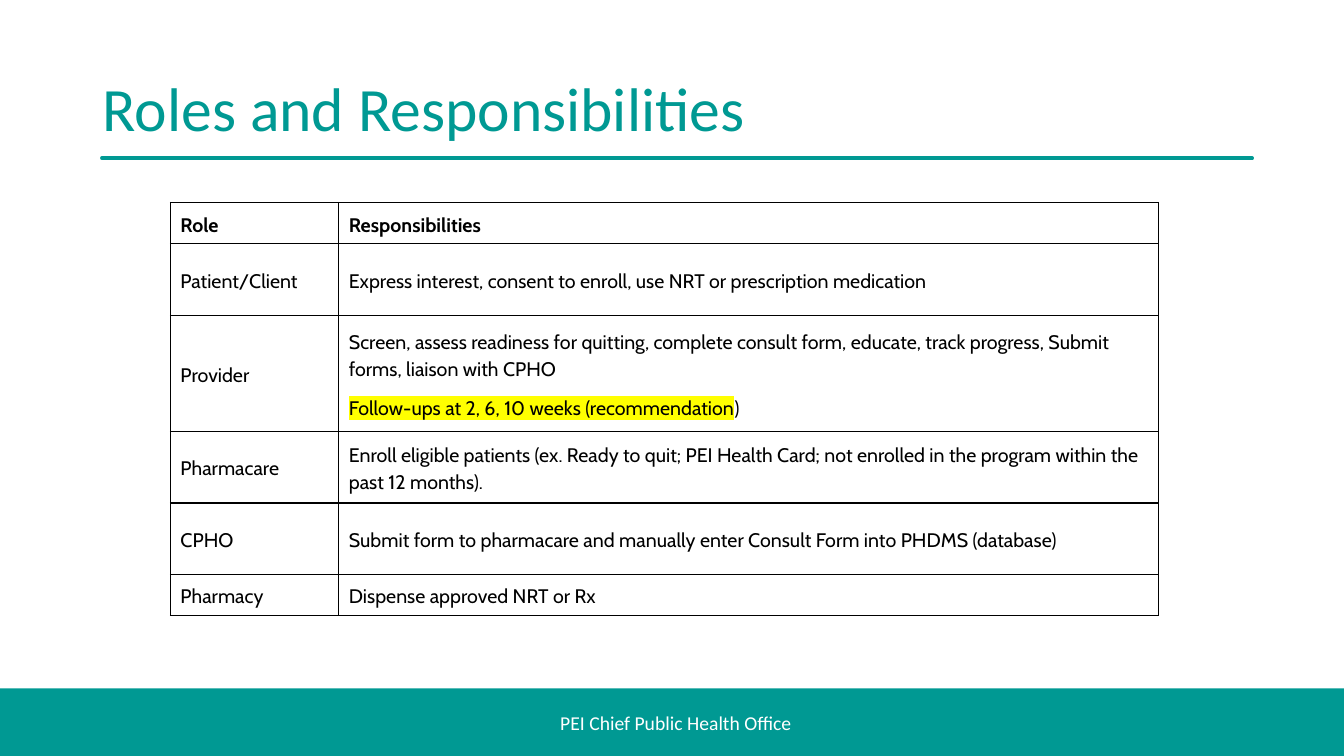
from dataclasses import dataclass

from lxml.etree import SubElement
from pptx import Presentation
from pptx.dml.color import RGBColor
from pptx.enum.shapes import MSO_CONNECTOR as CONN, MSO_SHAPE as SHAPE
from pptx.enum.text import MSO_ANCHOR as ANCHOR, PP_ALIGN as ALIGN
from pptx.oxml import parse_xml
from pptx.oxml.ns import nsdecls, qn
from pptx.util import Pt

PX = 9144  # EMU per px, 100 px to the inch
COLORS = {"teal": "009993", "white": "FFFFFF", "black": "000000", "yellow": "FFFF00"}
HEADING_FONT, TABLE_FONT = "Calibri", "Cabin"
COL_WIDTHS = (167, 813)


@dataclass
class Run:
    text: str
    size: int = 14
    font: str = TABLE_FONT
    color: str = "black"
    bold: bool = False
    highlight: str = ""


@dataclass
class Role:
    height: int
    name: str
    duties: list[list[Run]]
    header: bool = False


ROLES = [
    Role(41, "Role", [[Run("Responsibilities", bold=True)]], header=True),
    Role(71, "Patient/Client", [[Run(
        "Express interest, consent to enroll, use NRT or prescription medication")]]),
    Role(115, "Provider", [
        [Run("Screen, assess readiness for quitting, complete consult form, educate, "
             "track progress, Submit forms, liaison with CPHO")],
        [Run("Follow-ups at 2, 6, 10 weeks (recommendation", highlight="yellow"), Run(")")],
    ]),
    Role(71, "Pharmacare", [[Run(
        "Enroll eligible patients (ex. Ready to quit; PEI Health Card; "
        "not enrolled in the program within the past 12 months).")]]),
    Role(71, "CPHO", [[Run(
        "Submit form to pharmacare and manually enter Consult Form into PHDMS (database)")]]),
    Role(41, "Pharmacy", [[Run("Dispense approved NRT or Rx")]]),
]


def px(*lengths: int) -> list[int]:
    return [n * PX for n in lengths]


def rgb(name: str) -> RGBColor:
    return RGBColor.from_string(COLORS[name])


def add_run(p, run: Run) -> None:
    r = p.add_run()
    r.text = run.text
    r.font.size = Pt(run.size)
    r.font.bold = run.bold
    r.font.color.rgb = rgb(run.color)
    r.font.name = run.font
    if run.highlight:
        mark = parse_xml(f'<a:highlight {nsdecls("a")}>'
                         f'<a:srgbClr val="{COLORS[run.highlight]}"/></a:highlight>')
        r.font._element.find(qn("a:solidFill")).addnext(mark)


def add_text(slide, box: tuple[int, int, int, int], run: Run,
             align: ALIGN, spacing: float = 1.0) -> None:
    tf = slide.shapes.add_textbox(*px(*box)).text_frame
    tf.word_wrap = True
    tf.vertical_anchor = ANCHOR.MIDDLE
    p = tf.paragraphs[0]
    p.alignment = align
    p.line_spacing = spacing
    add_run(p, run)


def add_borders(cell) -> None:
    tc_pr = cell._tc.get_or_add_tcPr()
    for i, side in enumerate("LRTB"):
        tc_pr.insert(i, parse_xml(
            f'<a:ln{side} {nsdecls("a")} w="{Pt(1)}"><a:solidFill>'
            f'<a:srgbClr val="{COLORS["black"]}"/></a:solidFill></a:ln{side}>'))


def fill_cell(cell, paragraphs: list[list[Run]]) -> None:
    cell.fill.background()
    add_borders(cell)
    cell.vertical_anchor = ANCHOR.MIDDLE
    tf = cell.text_frame
    for i, runs in enumerate(paragraphs):
        p = tf.add_paragraph() if i else tf.paragraphs[0]
        p.line_spacing = 1.15
        p.space_after = Pt(8)
        for run in runs:
            add_run(p, run)


def add_roles_table(slide, left: int, top: int) -> None:
    height = sum(role.height for role in ROLES)
    table = slide.shapes.add_table(
        len(ROLES), len(COL_WIDTHS), *px(left, top, sum(COL_WIDTHS), height)).table
    table.first_row = table.horz_banding = False
    for col, width in zip(table.columns, COL_WIDTHS):
        col.width = width * PX
    for row, role in zip(table.rows, ROLES):
        row.height = role.height * PX
        name = [[Run(role.name, bold=role.header)]]
        for cell, paragraphs in zip(row.cells, (name, role.duties)):
            fill_cell(cell, paragraphs)


def main() -> None:
    prs = Presentation()
    prs.slide_width, prs.slide_height = px(1333, 750)
    slide = prs.slides.add_slide(prs.slide_layouts[6])

    # Footer band
    s = slide.shapes.add_shape(SHAPE.RECTANGLE, *px(0, 683, 1333, 67))
    s.shadow.inherit = False
    s.fill.solid()
    s.fill.fore_color.rgb = rgb("teal")
    s.line.fill.background()

    # Rule under the title
    rule = slide.shapes.add_connector(CONN.STRAIGHT, *px(101, 157, 1242, 157))
    rule.line.color.rgb = rgb("teal")
    rule.line.width = Pt(2.5)
    rule.line._get_or_add_ln().set("cap", "rnd")
    SubElement(rule._element.spPr, qn("a:effectLst"))

    # Title and footer text
    add_text(slide, (92, 64, 1150, 93),
             Run("Roles and Responsibilities", 44, HEADING_FONT, "teal"), ALIGN.LEFT, 0.9)
    add_text(slide, (0, 697, 795, 40),
             Run("PEI Chief Public Health Office", 14, HEADING_FONT, "white"), ALIGN.RIGHT)

    # Roles table
    add_roles_table(slide, 169, 201)

    prs.save("out.pptx")


if __name__ == "__main__":
    main()
